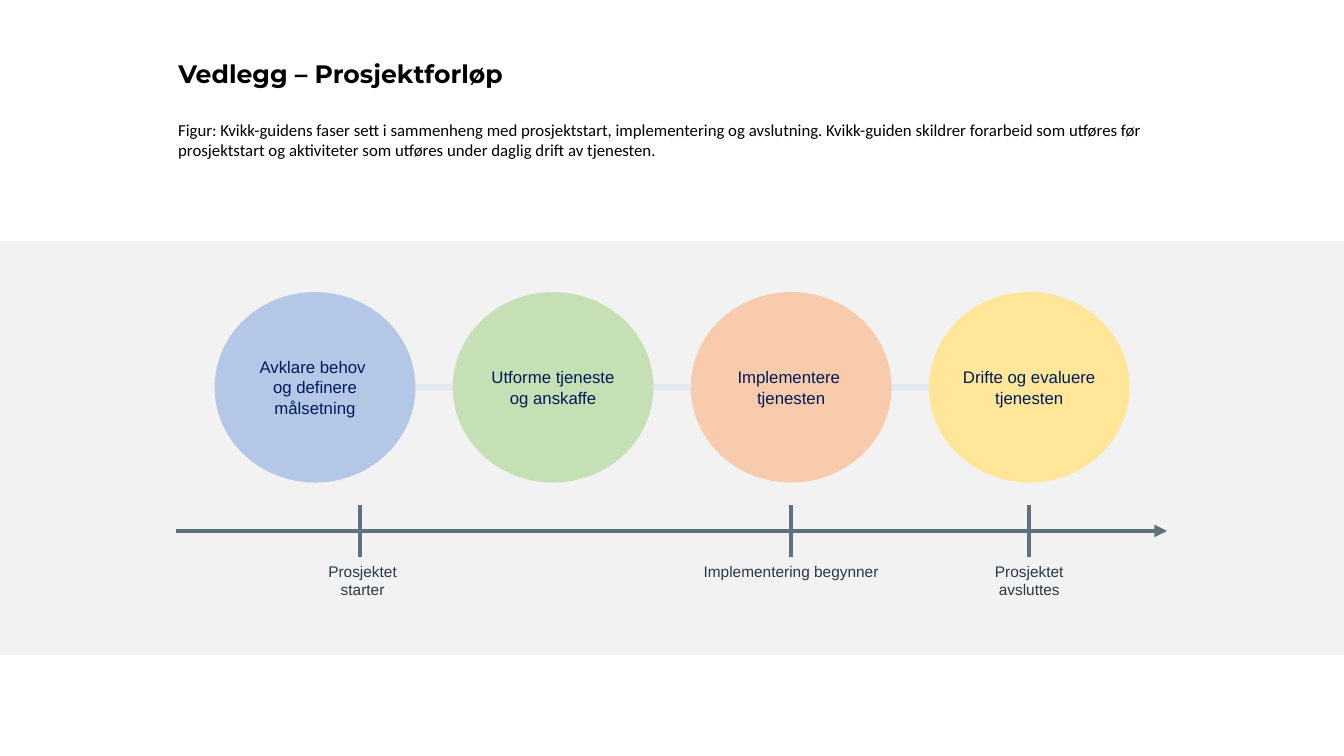
from lxml.etree import SubElement
from pptx import Presentation
from pptx.dml.color import RGBColor
from pptx.enum.shapes import MSO_CONNECTOR as CONNECTOR, MSO_SHAPE as SHAPE
from pptx.enum.text import MSO_ANCHOR as ANCHOR, MSO_AUTO_SIZE as AUTO_SIZE, PP_ALIGN as ALIGN
from pptx.oxml.ns import qn
from pptx.util import Cm, Pt

COLORS = {
    "black": "000000",
    "band": "F2F2F2",
    "rail": "DAE3F3",
    "blue": "B4C7E7",
    "green": "C5E0B4",
    "orange": "F8CBAD",
    "yellow": "FFE699",
    "phase_text": "001A58",
    "timeline": "5D717F",
    "label": "283846",
}

PHASES = [
    ("blue", ["Avklare behov ", "og definere målsetning"]),
    ("green", ["Utforme tjeneste og anskaffe"]),
    ("orange", ["Implementere \vtjenesten"]),
    ("yellow", ["Drifte og evaluere tjenesten"]),
]
PHASE_LEFT, PHASE_TOP, PHASE_STEP = 5.41, 7.36, 6
PHASE_WIDTH, PHASE_HEIGHT = 5.06, 4.8
AXIS_Y, TICK_HALF = 13.38, 0.65
LABEL_WIDTH = 5.34

CAPTION = (
    "Figur: Kvikk-guidens faser sett i sammenheng med prosjektstart, implementering og "
    "avslutning. Kvikk-guiden skildrer forarbeid som utføres før prosjektstart og "
    "aktiviteter som utføres under daglig drift av tjenesten."
)


def color(name):
    """Return the named colour."""
    return RGBColor.from_string(COLORS[name])


def write(text_frame, paragraphs, font_name, size, color_name, align=ALIGN.LEFT, bold=False):
    """Fill a text frame with formatted paragraphs; a vertical tab breaks a line."""
    for index, text in enumerate(paragraphs):
        paragraph = text_frame.add_paragraph() if index else text_frame.paragraphs[0]
        paragraph.alignment = align
        for line_index, line in enumerate(text.split("\v")):
            if line_index:
                paragraph.add_line_break()
            run = paragraph.add_run()
            run.text = line
            run.font.name = font_name
            run.font.size = Pt(size)
            run.font.bold = bold
            run.font.color.rgb = color(color_name)


def add_title(slide, text):
    """Place the title placeholder."""
    title = slide.shapes.title
    title.left, title.top, title.width, title.height = Cm(4.24), Cm(1.35), Cm(11.1), Cm(1.02)
    frame = title.text_frame
    frame.auto_size = AUTO_SIZE.NONE
    frame.word_wrap = False
    frame.vertical_anchor = ANCHOR.TOP
    write(frame, [text], "Montserrat", 18, "black", bold=True)


def add_text(slide, box, paragraphs, font_name, size, color_name, align=ALIGN.LEFT):
    """Add a wrapping text box."""
    frame = slide.shapes.add_textbox(*map(Cm, box)).text_frame
    frame.word_wrap = True
    write(frame, paragraphs, font_name, size, color_name, align)


def add_filled_shape(slide, kind, box, fill):
    """Add a flat shape without an outline."""
    shape = slide.shapes.add_shape(kind, *map(Cm, box))
    shape.shadow.inherit = False
    shape.fill.solid()
    shape.fill.fore_color.rgb = color(fill)
    shape.line.fill.background()
    return shape


def add_line(slide, start, end, color_name, width, alpha=None, arrow=False):
    """Add a straight line, optionally translucent or with an arrowhead."""
    connector = slide.shapes.add_connector(CONNECTOR.STRAIGHT, *map(Cm, start + end))
    connector.line.color.rgb = color(color_name)
    connector.line.width = Pt(width)
    properties = connector._element.spPr
    SubElement(properties, qn("a:effectLst"))
    if alpha:
        rgb = next(properties.iter(qn("a:srgbClr")))
        SubElement(rgb, qn("a:alpha"), val=str(alpha * 1000))
    if arrow:
        SubElement(properties.find(qn("a:ln")), qn("a:tailEnd"), type="triangle")


def add_phase(slide, index, fill, paragraphs):
    """Add one phase circle with its text."""
    left = PHASE_LEFT + index * PHASE_STEP
    box = (left, PHASE_TOP, PHASE_WIDTH, PHASE_HEIGHT)
    frame = add_filled_shape(slide, SHAPE.OVAL, box, fill).text_frame
    frame.word_wrap = True
    frame.vertical_anchor = ANCHOR.MIDDLE
    frame.margin_left = frame.margin_right = frame.margin_top = frame.margin_bottom = Cm(0.1)
    write(frame, paragraphs, "Arial", 12, "phase_text", ALIGN.CENTER)


def add_milestone(slide, tick_x, label_x, paragraphs):
    """Add a tick on the timeline and the label below it."""
    bottom = AXIS_Y + TICK_HALF
    add_line(slide, (tick_x, AXIS_Y - TICK_HALF), (tick_x, bottom), "timeline", 3)
    box = (label_x - LABEL_WIDTH / 2, bottom, LABEL_WIDTH, 0.75 if len(paragraphs) == 1 else 1.2)
    add_text(slide, box, paragraphs, "Arial", 11, "label", ALIGN.CENTER)


def phase_center(index):
    """Return the horizontal centre of a phase circle."""
    return PHASE_LEFT + index * PHASE_STEP + PHASE_WIDTH / 2


def main():
    """Build and save the slide."""
    presentation = Presentation()
    presentation.slide_width, presentation.slide_height = Cm(33.87), Cm(19.05)
    slide = presentation.slides.add_slide(presentation.slide_layouts[5])

    add_title(slide, "Vedlegg – Prosjektforløp")
    add_text(slide, (4.24, 2.9, 27, 1.28), [CAPTION], "Calibri", 12, "black")
    add_filled_shape(slide, SHAPE.RECTANGLE, (0, 6.07, 33.87, 10.44), "band")

    rail_y = PHASE_TOP + PHASE_HEIGHT / 2
    add_line(slide, (phase_center(0), rail_y), (phase_center(3), rail_y), "rail", 4.75, alpha=53)
    for index, (fill, paragraphs) in enumerate(PHASES):
        add_phase(slide, index, fill, paragraphs)

    add_line(slide, (4.44, AXIS_Y), (29.41, AXIS_Y), "timeline", 3, arrow=True)
    add_milestone(slide, 9.07, 9.14, ["Prosjektet", "starter"])
    add_milestone(slide, phase_center(2), phase_center(2), ["Implementering begynner"])
    add_milestone(slide, phase_center(3), phase_center(3), ["Prosjektet", "avsluttes"])

    presentation.save("out.pptx")


if __name__ == "__main__":
    main()
